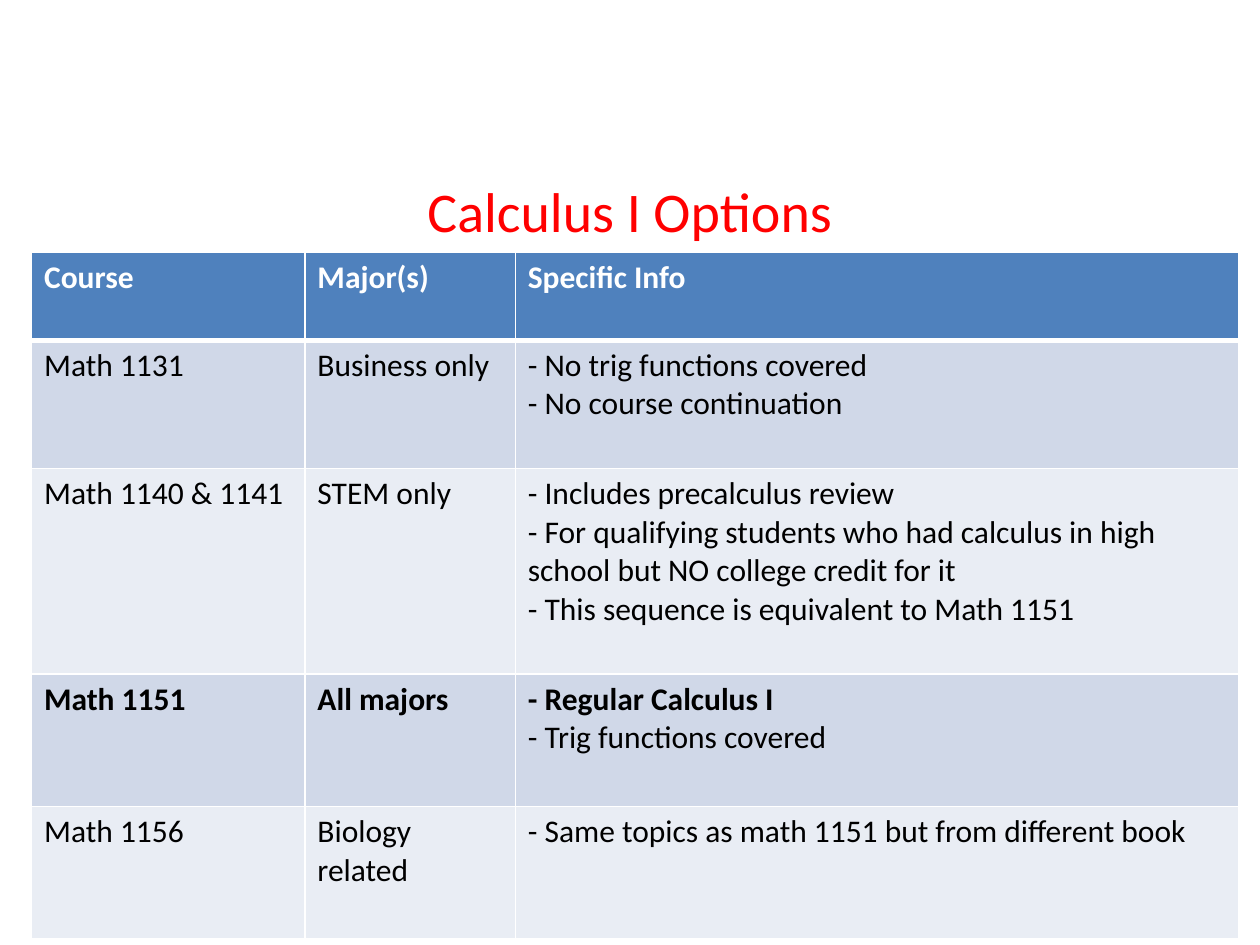
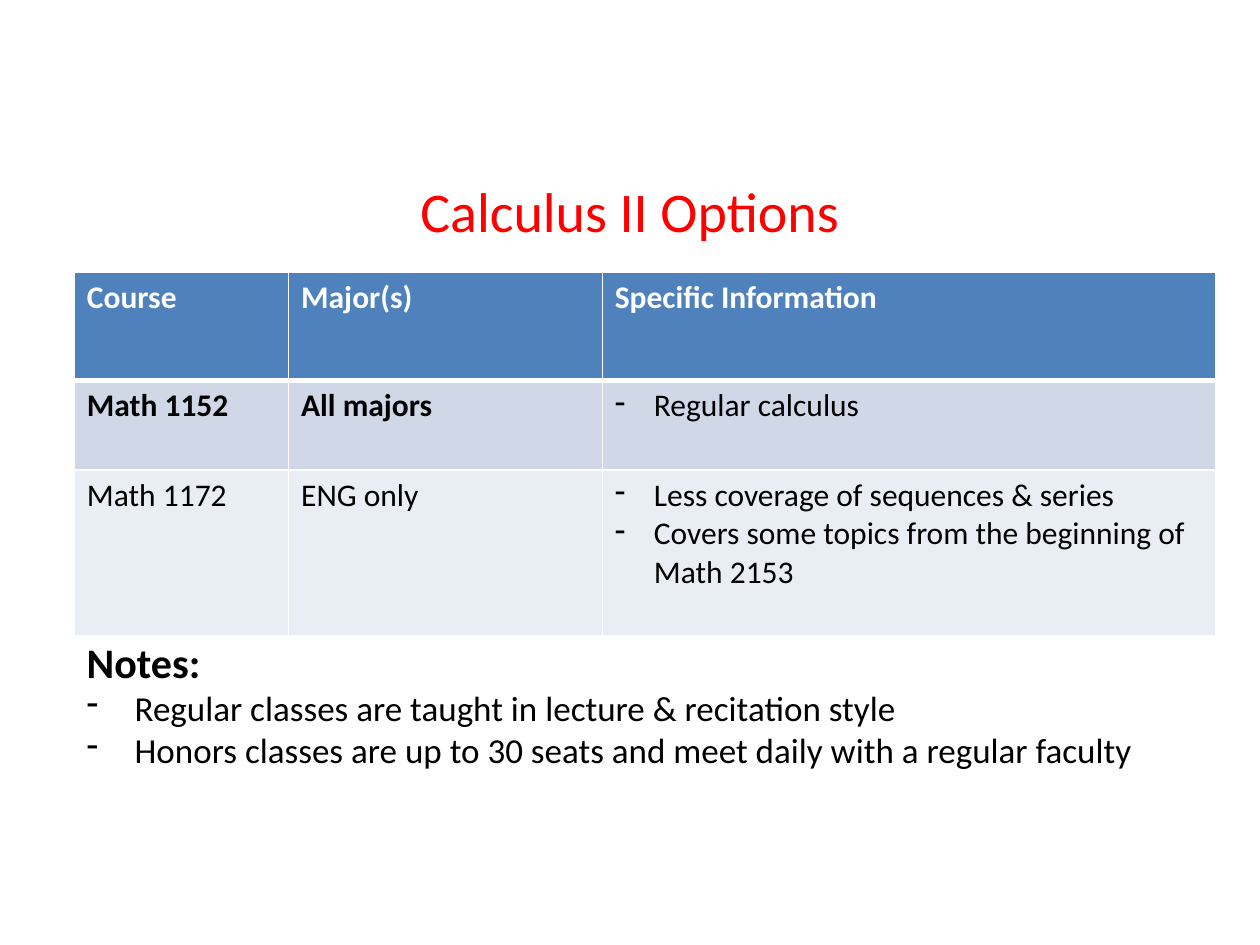
from lxml.etree import SubElement
from pptx import Presentation
from pptx.dml.color import RGBColor
from pptx.enum.text import MSO_ANCHOR, PP_ALIGN
from pptx.oxml.ns import qn
from pptx.util import Inches, Pt

FONT = "Calibri"
RED = RGBColor(0xFF, 0x00, 0x00)
BLACK = RGBColor(0x00, 0x00, 0x00)
WHITE = RGBColor(0xFF, 0xFF, 0xFF)
HEADER_BLUE = RGBColor(0x4F, 0x81, 0xBD)
BANDS = [RGBColor(0xD0, 0xD8, 0xE8), RGBColor(0xE9, 0xED, 0xF4)]

# Content: each cell is a list of lines
CALCULUS_1 = {
    "title": "Calculus I Options",
    "at": (0.25, 2),
    "columns": [2.17, 1.67, 5.74],
    "heights": [0.7, 1.02, 1.63, 1.05, 1.05],
    "indent": 0,
    "rows": [
        (["Course"], ["Major(s)"], ["Specific Info"]),
        (["Math 1131"], ["Business only"],
         ["- No trig functions covered", "- No course continuation"]),
        (["Math 1140 & 1141"], ["STEM only"],
         ["- Includes precalculus review",
          "- For qualifying students who had calculus in high school "
          "but NO college credit for it",
          "- This sequence is equivalent to Math 1151"]),
        (["Math 1151"], ["All majors"],
         ["- Regular Calculus I", "- Trig functions covered"]),
        (["Math 1156"], ["Biology related"],
         ["- Same topics as math 1151 but from different book"]),
    ],
}
CALCULUS_2 = {
    "title": "Calculus II Options",
    "at": (0.59, 2.16),
    "columns": [1.7, 2.49, 4.87],
    "heights": [0.86, 0.71, 1.32],
    "indent": 0.31,
    "rows": [
        (["Course"], ["Major(s)"], ["Specific Information"]),
        (["Math 1152"], ["All majors"], ["Regular calculus"]),
        (["Math 1172"], ["ENG only"],
         ["Less coverage of sequences & series",
          "Covers some topics from the beginning of Math 2153"]),
    ],
}
BOLD_LINES = {"Math 1151", "Math 1152", "All majors", "- Regular Calculus I"}
NOTES_HEADING = "Notes:"
NOTES = [
    "Regular classes are taught in lecture & recitation style",
    "Honors classes are up to 30 seats and meet daily with a regular faculty",
]


def add_line(frame, text, size, color, bold=False, indent=0):
    """Write one paragraph, with a dash bullet when it is indented."""
    first = frame.paragraphs[0]
    para = frame.add_paragraph() if first.runs else first
    if indent:
        properties = para._p.get_or_add_pPr()
        properties.set("marL", str(Inches(indent)))
        properties.set("indent", str(-Inches(indent)))
        SubElement(properties, qn("a:buChar"), char="-")
    span = para.add_run()
    span.text = text
    span.font.name = FONT
    span.font.size = Pt(size)
    span.font.bold = bold
    span.font.color.rgb = color
    return para


def add_box(page, left, top, width, height):
    box = page.shapes.add_textbox(
        Inches(left), Inches(top), Inches(width), Inches(height))
    box.text_frame.word_wrap = True
    return box.text_frame


def add_borders(cell, top, bottom):
    """Draw white borders, which must come before the cell's fill."""
    properties = cell._tc.get_or_add_tcPr()
    for side, points in (("L", 1), ("R", 1), ("T", top), ("B", bottom)):
        line = SubElement(properties, qn(f"a:ln{side}"), w=str(Pt(points)))
        fill = SubElement(line, qn("a:solidFill"))
        SubElement(fill, qn("a:srgbClr"), val=str(WHITE))


def add_course_table(page, content):
    rows, columns = content["rows"], content["columns"]
    left, top = content["at"]
    table = page.shapes.add_table(
        len(rows), len(columns), Inches(left), Inches(top),
        Inches(sum(columns)), Inches(sum(content["heights"]))).table
    for column, width in zip(table.columns, columns):
        column.width = Inches(width)
    for row, height in zip(table.rows, content["heights"]):
        row.height = Inches(height)

    for r, row in enumerate(rows):
        header = r == 0
        for c, lines in enumerate(row):
            cell = table.cell(r, c)
            add_borders(cell, 3 if r == 1 else 1, 3 if header else 1)
            cell.fill.solid()
            cell.fill.fore_color.rgb = HEADER_BLUE if header else BANDS[(r - 1) % 2]
            listed = c == len(columns) - 1 and not header
            for text in lines:
                add_line(cell.text_frame, text, 18,
                         WHITE if header else BLACK,
                         header or text in BOLD_LINES,
                         content["indent"] if listed else 0)


def add_options_page(deck, content):
    page = deck.slides.add_slide(deck.slide_layouts[6])
    # Title
    frame = add_box(page, 0.5, 1.42, 9, 0.5)
    frame.margin_top = frame.margin_bottom = 0
    frame.vertical_anchor = MSO_ANCHOR.MIDDLE
    add_line(frame, content["title"], 32, RED).alignment = PP_ALIGN.CENTER
    # Courses
    add_course_table(page, content)
    return page


def main():
    deck = Presentation()
    deck.slide_width, deck.slide_height = Inches(10), Inches(7.5)
    add_options_page(deck, CALCULUS_1)
    page = add_options_page(deck, CALCULUS_2)

    # Notes below the second table
    frame = add_box(page, 0.59, 5, 9.07, 1.82)
    add_line(frame, NOTES_HEADING, 24, BLACK, bold=True)
    for note in NOTES:
        add_line(frame, note, 20, BLACK, indent=0.38)
    deck.save("out.pptx")


if __name__ == "__main__":
    main()
